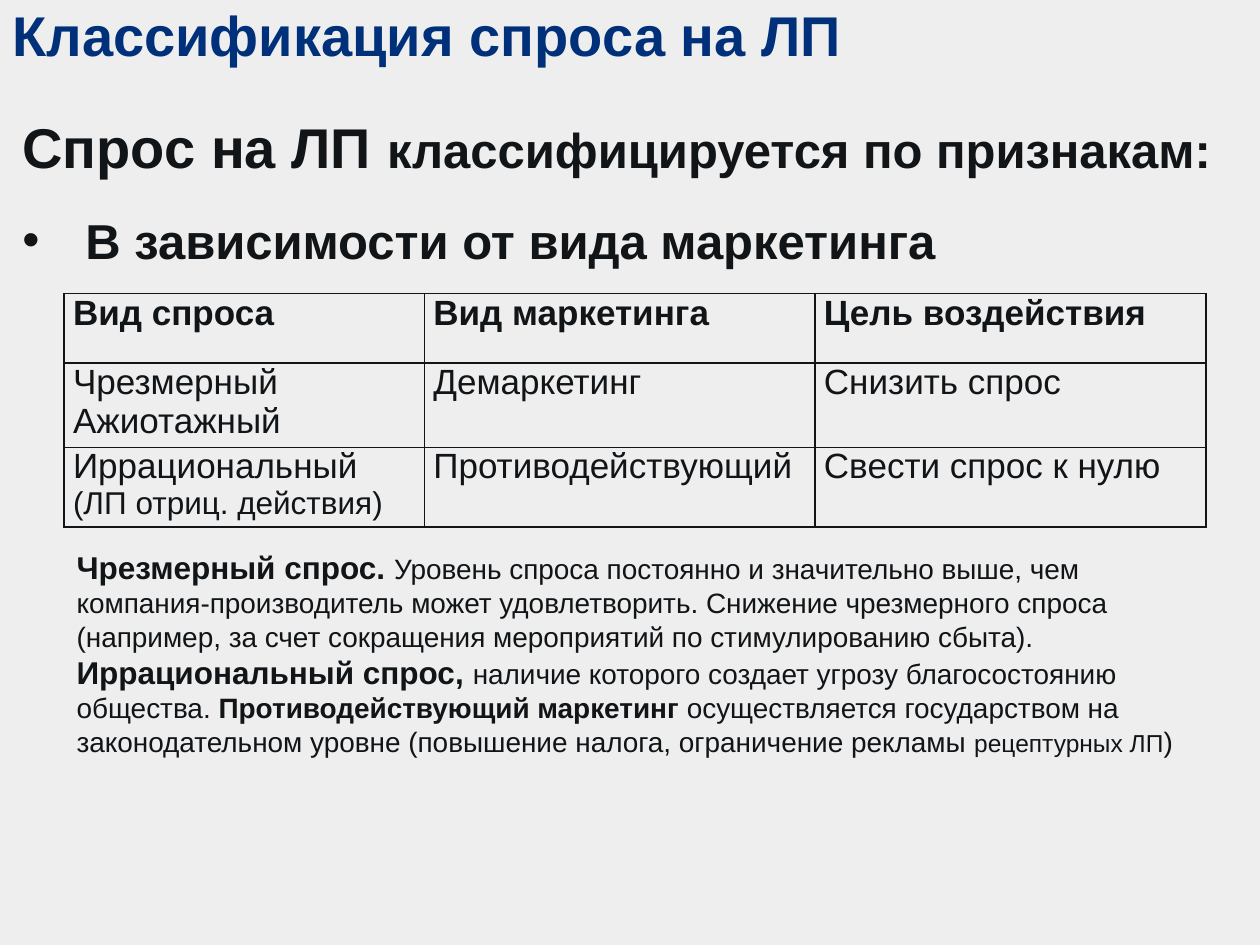
from dataclasses import dataclass

from lxml import etree
from pptx import Presentation
from pptx.dml.color import RGBColor
from pptx.enum import text
from pptx.oxml import ns
from pptx.util import Inches, Pt


@dataclass(frozen=True)
class Theme:
    font: str = "Arial"
    background: str = "EEEEEE"
    heading: str = "003079"
    ink: str = "111518"
    title: int = 32
    subtitle: int = 28
    cell: int = 20
    term: int = 18
    body: int = 16
    small: int = 14
    border: int = 1


THEME = Theme()

# Each run is (text, size, bold).
TITLE = [[("Классификация спроса на ЛП", THEME.title, True)]]
LEAD = [[("Спрос на ЛП ", THEME.title, True),
         ("классифицируется по признакам:", THEME.subtitle, True)]]
CRITERION = [[("В зависимости от вида маркетинга", THEME.subtitle, True)]]
HEADERS = ["Вид спроса", "Вид маркетинга", "Цель воздействия"]
DEMAND_ROWS = [
    [[("Чрезмерный Ажиотажный", THEME.cell, False)],
     [("Демаркетинг", THEME.cell, False)],
     [("Снизить спрос", THEME.cell, False)]],
    [[("Иррациональный ", THEME.cell, False), ("(ЛП отриц. действия)", THEME.term, False)],
     [("Противодействующий", THEME.cell, False)],
     [("Свести спрос к нулю", THEME.cell, False)]],
]
COLUMN_WIDTHS = [2.86, 3.1, 3.1]
ROW_HEIGHTS = [0.55, 0.67, 0.63]
DEFINITIONS = [
    [("Чрезмерный спрос. ", THEME.term, True),
     ("Уровень спроса постоянно и значительно выше, чем компания-производитель может "
      "удовлетворить. Снижение чрезмерного спроса (например, за счет сокращения "
      "мероприятий по стимулированию сбыта).", THEME.body, False)],
    [("Иррациональный спрос, ", THEME.term, True),
     ("наличие которого создает угрозу благосостоянию общества. ", THEME.body, False),
     ("Противодействующий маркетинг ", THEME.body, True),
     ("осуществляется государством на законодательном уровне (повышение налога, "
      "ограничение рекламы ", THEME.body, False),
     ("рецептурных ЛП", THEME.small, False),
     (")", THEME.body, False)],
]


def set_attributes(target, values):
    for name, value in values.items():
        setattr(target, name, value)


def write_paragraphs(frame, paragraphs, color=THEME.ink):
    for index, runs in enumerate(paragraphs):
        paragraph = frame.add_paragraph() if index else frame.paragraphs[0]
        for words, size, bold in runs:
            run = paragraph.add_run()
            run.text = words
            set_attributes(run.font, {"name": THEME.font, "size": Pt(size), "bold": bold})
            run.font.color.rgb = RGBColor.from_string(color)


def add_text(slide, box, paragraphs, color=THEME.ink, anchor=text.MSO_ANCHOR.TOP):
    frame = slide.shapes.add_textbox(*map(Inches, box)).text_frame
    set_attributes(frame, {"word_wrap": True, "vertical_anchor": anchor})
    write_paragraphs(frame, paragraphs, color)
    return frame


def add_title(slide, box):
    frame = add_text(slide, box, TITLE, THEME.heading, text.MSO_ANCHOR.MIDDLE)
    frame.paragraphs[0].line_spacing = 0.9


def add_criterion(slide, box):
    """Place the bulleted line with a hanging indent."""
    frame = add_text(slide, box, CRITERION)
    properties = frame.paragraphs[0]._p.get_or_add_pPr()
    properties.set("marL", str(Inches(0.5)))
    properties.set("indent", str(-Inches(0.5)))
    etree.SubElement(properties, ns.qn("a:buFont")).set("typeface", THEME.font)
    etree.SubElement(properties, ns.qn("a:buChar")).set("char", "•")


def add_borders(cell):
    properties = cell._tc.get_or_add_tcPr()
    for side in ("lnL", "lnR", "lnT", "lnB"):
        line = etree.SubElement(properties, ns.qn(f"a:{side}"), w=str(Pt(THEME.border)))
        fill = etree.SubElement(line, ns.qn("a:solidFill"))
        etree.SubElement(fill, ns.qn("a:srgbClr"), val=THEME.ink)


def add_demand_table(slide, box):
    rows = [[[(header, THEME.cell, True)] for header in HEADERS], *DEMAND_ROWS]
    table = slide.shapes.add_table(len(rows), len(HEADERS), *map(Inches, box)).table
    set_attributes(table, {"first_row": False, "horz_banding": False})
    for column, width in zip(table.columns, COLUMN_WIDTHS):
        column.width = Inches(width)
    for row, height, contents in zip(table.rows, ROW_HEIGHTS, rows):
        row.height = Inches(height)
        for cell, runs in zip(row.cells, contents):
            set_attributes(cell, {"margin_left": Inches(0.07), "margin_right": Inches(0.07),
                                  "margin_top": 0, "margin_bottom": 0})
            add_borders(cell)
            cell.fill.background()
            write_paragraphs(cell.text_frame, [runs])


def build_slide(presentation):
    slide = presentation.slides.add_slide(presentation.slide_layouts[6])
    background = slide.background.fill
    background.solid()
    background.fore_color.rgb = RGBColor.from_string(THEME.background)
    add_title(slide, (0, 0.01, 9.57, 0.59))
    add_text(slide, (0.08, 0.84, 9.8, 0.64), LEAD)
    add_criterion(slide, (0.08, 1.62, 9.8, 0.57))
    add_demand_table(slide, (0.51, 2.33, sum(COLUMN_WIDTHS), sum(ROW_HEIGHTS)))
    add_text(slide, (0.51, 4.3, 9.06, 1.78), DEFINITIONS)


def main():
    presentation = Presentation()
    set_attributes(presentation, {"slide_width": Inches(10), "slide_height": Inches(7.5)})
    build_slide(presentation)
    presentation.save("out.pptx")


if __name__ == "__main__":
    main()
